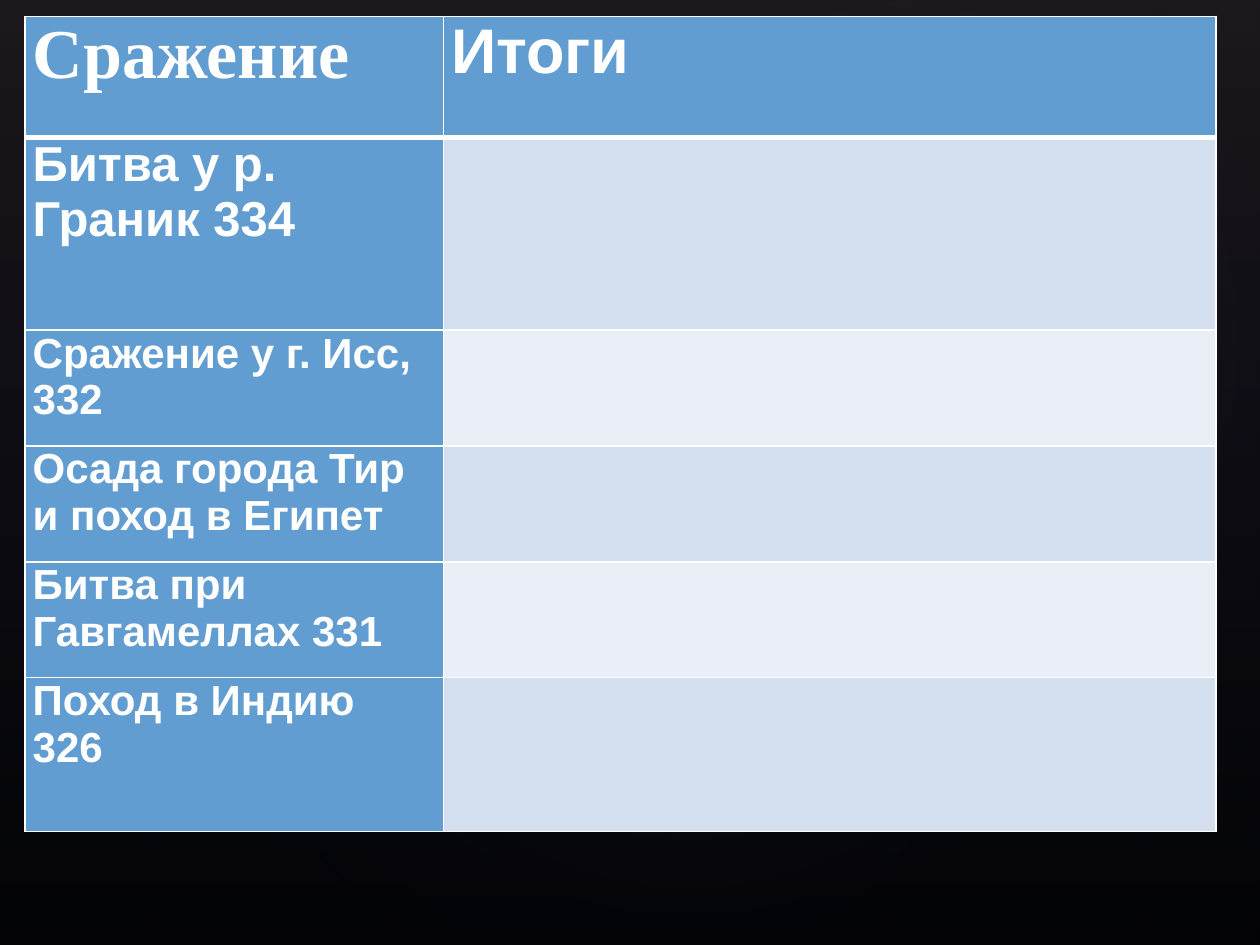
"""Build a slide with a table of battles and their outcomes on a dark glowing background."""
from pptx import Presentation, oxml
from pptx.dml.color import RGBColor
from pptx.enum import shapes
from pptx.oxml import ns
from pptx.util import Inches, Pt


def rgb(value):
    return RGBColor.from_string(value)


def add_gradient_shape(slide, preset, box, rotation, stops, direction):
    shape = slide.shapes.add_shape(preset, *[Inches(length) for length in box])
    shape.rotation = rotation
    stop_xml = "".join(
        f'<a:gs pos="{position * 1000}"><a:srgbClr val="{color}">'
        f'<a:alpha val="{alpha * 1000}"/></a:srgbClr></a:gs>'
        for position, color, alpha in stops
    )
    shape._element.spPr.append(oxml.parse_xml(
        f'<a:gradFill {ns.nsdecls("a")} rotWithShape="1">'
        f"<a:gsLst>{stop_xml}</a:gsLst>{direction}</a:gradFill>"
    ))
    shape.line.fill.background()
    shape.shadow.inherit = False


presentation = Presentation()
presentation.slide_width = Inches(10)
presentation.slide_height = Inches(7.5)
slide = presentation.slides.add_slide(presentation.slide_layouts[6])
slide.background.fill.solid()
slide.background.fill.fore_color.rgb = rgb("000000")

add_gradient_shape(
    slide, shapes.MSO_SHAPE.RECTANGLE, (0, 0, 10, 7.5), 0,
    [(0, "504652", 36), (100, "242852", 10)], '<a:lin ang="5400000" scaled="0"/>',
)
radial = (
    '<a:path path="circle"><a:fillToRect l="50000" t="50000" r="50000" b="50000"/></a:path>'
)
glows = [
    ((1.5, 1.14, 7.92, 6.24), 328.7, 7),
    ((-0.3, 1.28, 6.06, 4.9), 294.3, 8),
    ((3.58, 0.13, 7.09, 5.2), 328.7, 8),
]
for box, rotation, alpha in glows:
    add_gradient_shape(
        slide, shapes.MSO_SHAPE.OVAL, box, rotation,
        [(0, "C4BCC6", alpha), (58, "242852", 0)], radial,
    )

rows = [
    (0.96, 40, "Сражение", "Итоги"),
    (1.53, 28, "Битва у р. Граник 334", ""),
    (0.92, 24, "Сражение у г. Исс, 332", ""),
    (0.92, 24, "Осада города Тир и поход в Египет", ""),
    (0.92, 24, "Битва при Гавгамеллах 331", ""),
    (1.22, 24, "Поход в Индию 326", ""),
]
table = slide.shapes.add_table(
    len(rows), 2, Inches(0.2), Inches(0.13), Inches(9.45), Inches(6.46)
).table
table.columns[0].width = Inches(3.32)
table.columns[1].width = Inches(6.13)

for row_index, (height, size, *labels) in enumerate(rows):
    table.rows[row_index].height = Inches(height)
    for column_index, label in enumerate(labels):
        cell = table.cell(row_index, column_index)
        cell.margin_left = cell.margin_right = Inches(0.06)
        cell.margin_top = cell.margin_bottom = 0
        if row_index == 0 or column_index == 0:
            color = "629DD1"
        else:
            color = "D3DFEE" if row_index % 2 else "EAEFF7"
        cell.fill.solid()
        cell.fill.fore_color.rgb = rgb(color)
        if label:
            cell.text_frame.text = label
            font = cell.text_frame.paragraphs[0].runs[0].font
            font.name = "Times New Roman" if label == "Сражение" else "Arial"
            font.size = Pt(36 if label == "Итоги" else size)
            font.bold = True
            font.color.rgb = rgb("FFFFFF")
        for position, side in enumerate("LRTB"):
            heavy = (row_index, side) in [(0, "B"), (1, "T")]
            cell._tc.get_or_add_tcPr().insert(position, oxml.parse_xml(
                f'<a:ln{side} {ns.nsdecls("a")} w="{Pt(3 if heavy else 1)}">'
                '<a:solidFill><a:srgbClr val="FFFFFF"/></a:solidFill>'
                f"</a:ln{side}>"
            ))

presentation.save("out.pptx")
